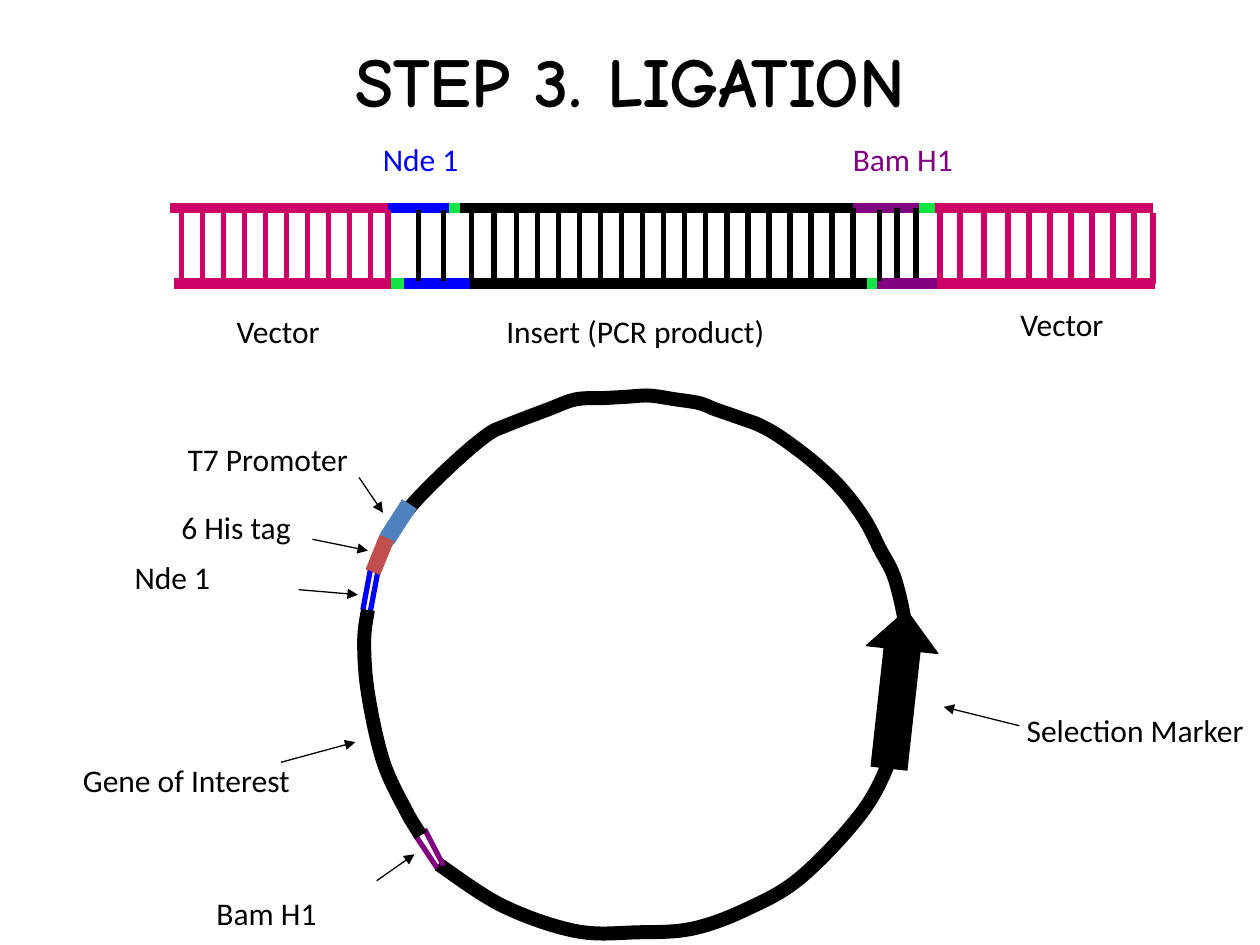
from pptx import Presentation
from pptx.dml.color import RGBColor
from pptx.enum.shapes import MSO_CONNECTOR, MSO_SHAPE
from pptx.enum.text import MSO_ANCHOR, MSO_AUTO_SIZE, PP_ALIGN
from pptx.oxml.ns import qn
from pptx.util import Pt
from lxml import etree

PX = 9144  # 100 px to the inch
STRAIGHT = MSO_CONNECTOR.STRAIGHT
UP = MSO_SHAPE.UP_ARROW
TOP = MSO_ANCHOR.TOP
FIT = MSO_AUTO_SIZE.SHAPE_TO_FIT_TEXT
CENTER = PP_ALIGN.CENTER
INK = {
    "black": "000000", "blue": "0000FF", "purple": "800080", "pink": "CC0066",
    "green": "13E545", "steel": "4F81BD", "brick": "C0504D",
}


def emu(n):
    return round(n * PX)


def color(name):
    return RGBColor.from_string(INK[name])


def style(font, name, size, ink, bold=False):
    font.name, font.size, font.bold = name, Pt(size), bold
    font.color.rgb = color(ink)


def line(slide, box, ends, ink, width, arrow=False):
    x, y = box
    x1, y1, x2, y2 = ends
    link = slide.shapes.add_connector(
        STRAIGHT, emu(x + x1), emu(y + y1), emu(x + x2), emu(y + y2))
    link.line.color.rgb = color(ink)
    link.line.width = Pt(width)
    if arrow:
        etree.SubElement(link.line._get_or_add_ln(), qn("a:tailEnd"), type="triangle")
    etree.SubElement(link._element.spPr, qn("a:effectLst"))


def label(slide, box, left, top, width, text, ink="black"):
    x, y = box
    shape = slide.shapes.add_textbox(emu(x + left), emu(y + top), emu(width), emu(40))
    frame = shape.text_frame
    frame.word_wrap = False
    frame.auto_size = FIT
    run = frame.paragraphs[0].add_run()
    run.text = text
    style(run.font, "Calibri", 18, ink)


def smooth(knots):
    """Start point, then two handles and an end for each curve through the knots."""
    pad = [knots[0], *knots, knots[-1]]
    points = [knots[0]]
    for a, b, c, d in zip(pad, pad[1:], pad[2:], pad[3:]):
        points.append(tuple(q + (r - p) / 6 for p, q, r in zip(a, b, c)))
        points.append(tuple(r - (s - q) / 6 for q, r, s in zip(b, c, d)))
        points.append(c)
    return points


def curve(slide, box, knots, ink, width):
    x, y = box
    points = [(emu(x + px), emu(y + py)) for px, py in smooth(knots)]
    outline = slide.shapes.build_freeform(*points[0])
    outline.add_line_segments(points[1:], close=False)
    shape = outline.convert_to_shape()
    # Each three straight steps become one Bezier curve
    steps = list(shape._element.iter(qn("a:lnTo")))
    for first, second, third in zip(steps[::3], steps[1::3], steps[2::3]):
        first.tag = qn("a:cubicBezTo")
        for step in (second, third):
            first.append(step[0])
            step.getparent().remove(step)
    shape.shadow.inherit = False
    shape.fill.background()
    shape.line.color.rgb = color(ink)
    shape.line.width = Pt(width)


def heading(slide, left, top, width, height):
    title = slide.shapes.title
    title.left, title.top = emu(left), emu(top)
    title.width, title.height = emu(width), emu(height)
    frame = title.text_frame
    frame.vertical_anchor = TOP
    para = frame.paragraphs[0]
    para.alignment = CENTER
    run = para.add_run()
    run.text = "STEP 3. LIGATION"
    style(run.font, "Comic Neue", 40, "black", True)


def plasmid(slide, box):
    x, y = box
    # Backbone
    ring = [
        (296, 154), (306, 131), (322, 107), (338, 89), (364, 64), (387, 45),
        (401, 38), (435, 25), (457, 17), (479, 16), (497, 15), (515, 14),
        (536, 17), (555, 20), (568, 25), (591, 33), (604, 38), (621, 48),
        (646, 67), (668, 88), (686, 112), (698, 135), (711, 162), (720, 210),
        (717, 260), (707, 301), (684, 345), (636, 396), (594, 421), (550, 437),
        (506, 440), (457, 439), (399, 419), (348, 386)]
    curve(slide, box, ring, "black", 8)
    # Cut sites, each a pair of strands
    for ends, ink in [
            ((352, 387, 337, 358), "purple"), ((347, 389, 329, 362), "purple"),
            ((300, 153, 294, 185), "blue"), ((294, 152, 288, 184), "blue")]:
        line(slide, box, ends, ink, 3)
    # Gene, marker, promoter and tag
    gene = [(292, 184), (289, 209), (292, 250), (304, 304), (322, 343), (334, 363)]
    curve(slide, box, gene, "black", 8)
    marker = slide.shapes.add_shape(UP, emu(x + 684), emu(y + 184), emu(57), emu(126))
    marker.rotation = 6.3
    marker.adjustments[0], marker.adjustments[1] = 0.5, 0.55
    marker.shadow.inherit = False
    marker.fill.solid()
    marker.fill.fore_color.rgb = color("black")
    marker.line.color.rgb = color("black")
    marker.line.width = Pt(0.75)
    curve(slide, box, [(307, 128), (325, 100)], "steel", 10)
    line(slide, box, (307, 127, 296, 154), "brick", 9)
    # Labels with their pointers
    for left, top, width, text, ends in [
            (139, 44, 158, "T7 Promoter", (285, 79, 304, 107)),
            (134, 98, 119, "6 His tag", (248, 128, 292, 137)),
            (97, 138, 85, "Nde 1", (237, 168, 284, 172)),
            (56, 299, 201, "Gene of Interest", (223, 305, 282, 289)),
            (162, 405, 107, "Bam H1", (299, 399, 329, 378)),
            (805, 259, 203, "Selection Marker", (809, 276, 749, 261))]:
        label(slide, box, left, top, width, text)
        line(slide, box, ends, "black", 0.75, arrow=True)


def ladder(slide, box):
    top, base = 65, 125
    # Strands, back to front
    for x1, x2, y, ink in [
            (207, 227, base, "green"), (251, 270, top, "green"),
            (581, 601, base, "green"), (627, 646, top, "green"),
            (265, 585, top, "black"), (267, 588, base, "black"),
            (221, 273, base, "blue"), (204, 256, top, "blue"),
            (577, 629, top, "purple"), (596, 648, base, "purple"),
            (644, 817, base, "pink"), (38, 210, base, "pink"),
            (35, 208, top, "pink"), (642, 815, top, "pink")]:
        line(slide, box, (x1, y, x2, y), ink, 6)

    # Rungs: even runs, with the odd ones beside the joints
    def even(start, count):
        return [start + i * 50 / 3 for i in range(count)]

    for rungs, y, ink in [
            (even(44, 10) + [208], 67, "pink"),
            ([232, 252, 274, 292] + even(310, 10) + [598], 67, "black"),
            (even(477, 7) + [612, 627], 65, "black"),
            ([646], 65, "pink"),
            ([662, 681] + even(700, 7) + [815], 69, "pink")]:
        for x in rungs:
            line(slide, box, (x, y, x, y + 56), ink, 3)
    # Labels
    for left, y, width, text, ink in [
            (194, 6, 85, "Nde 1", "blue"), (567, 6, 107, "Bam H1", "purple"),
            (78, 143, 91, "Vector", "black"),
            (292, 143, 248, "Insert (PCR product)", "black"),
            (700, 137, 91, "Vector", "black")]:
        label(slide, box, left, y, width, text, ink)


def main():
    deck = Presentation()
    deck.slide_width, deck.slide_height = emu(1000), emu(750)
    slide = deck.slides.add_slide(deck.slide_layouts[5])
    plasmid(slide, (0, 300))
    ladder(slide, (100, 100))
    heading(slide, 50, 25, 900, 125)
    deck.save("out.pptx")


if __name__ == "__main__":
    main()
